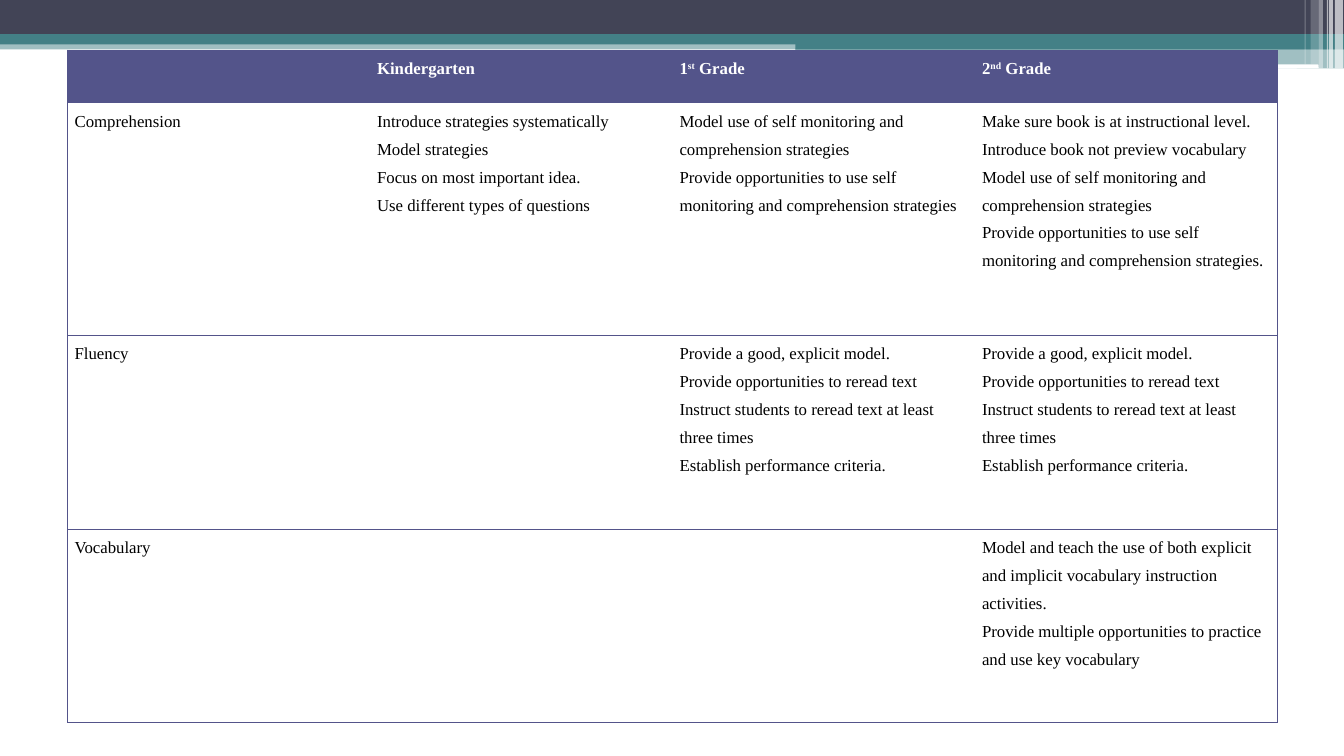
from lxml import etree
from pptx import Presentation
from pptx.dml.color import RGBColor
from pptx.enum.shapes import MSO_SHAPE
from pptx.enum.text import PP_ALIGN
from pptx.oxml.ns import qn
from pptx.util import Pt

PX = 9144  # 100 px to the inch
RECT, ROUNDED = MSO_SHAPE.RECTANGLE, MSO_SHAPE.ROUNDED_RECTANGLE
LEFT, JUSTIFY = PP_ALIGN.LEFT, PP_ALIGN.JUSTIFY
DARK, TEAL, WHITE, PURPLE, BLACK = "424456", "438086", "FFFFFF", "53548A", "000000"


def color(hex_code):
    return RGBColor.from_string(hex_code)


def add_border(cell, side, visible):
    line = etree.SubElement(cell._tc.get_or_add_tcPr(), qn(f"a:ln{side}"), w=str(Pt(0.75)))
    if visible:
        fill = etree.SubElement(line, qn("a:solidFill"))
        etree.SubElement(fill, qn("a:srgbClr"), val=PURPLE)
    else:
        etree.SubElement(line, qn("a:noFill"))


presentation = Presentation()
presentation.slide_width = 1333 * PX
presentation.slide_height = 750 * PX
slide = presentation.slides.add_slide(presentation.slide_layouts[6])

# Header bands: shape kind, left, top, width, height, fill, opacity in percent
bands = [
    (RECT, 0, 40, 1333, 9, TEAL, 50),
    (RECT, 0, 0, 1333, 34, DARK, 100),
    (RECT, 0, 34, 1333, 10, TEAL, 100),
    (RECT, 789, 39, 544, 10, TEAL, 100),
    (RECT, 789, 48, 544, 20, TEAL, 50),
    (ROUNDED, 788, 54, 447, 3, WHITE, 100),
    (ROUNDED, 1075, 64, 233, 4, WHITE, 100),
    (RECT, 1324, 0, 8, 68, WHITE, 65),
    (RECT, 1318, 0, 4, 68, WHITE, 65),
    (RECT, 1316, 0, 1, 68, WHITE, 60),
    (RECT, 1308, 0, 4, 68, WHITE, 40),
    (RECT, 1300, 0, 8, 64, WHITE, 20),
    (RECT, 1294, 0, 1, 64, WHITE, 30),
]
for kind, left, top, width, height, fill, opacity in bands:
    band = slide.shapes.add_shape(kind, left * PX, top * PX, width * PX, height * PX)
    band.shadow.inherit = False
    band.line.fill.background()
    band.fill.solid()
    band.fill.fore_color.rgb = color(fill)
    if opacity < 100:
        fill_color = band._element.spPr.find(f".//{qn('a:srgbClr')}")
        etree.SubElement(fill_color, qn("a:alpha"), val=str(opacity * 1000))

# Each cell is a list of paragraphs; text between ^ marks is superscript
fluency = [
    "Provide a good, explicit model.",
    "Provide opportunities to reread text",
    "Instruct students to reread text at least three times",
    "Establish performance criteria.",
]
monitoring = "Model use of self monitoring and comprehension strategies"
opportunities = "Provide opportunities to use self monitoring and comprehension strategies"
rows = [
    [[], ["Kindergarten"], ["1^st^ Grade"], ["2^nd^ Grade"]],
    [
        ["Comprehension"],
        [
            "Introduce strategies systematically",
            "Model strategies",
            "Focus on most important idea.",
            "Use different types of questions",
        ],
        [monitoring, opportunities],
        [
            "Make sure book is at instructional level.",
            "Introduce book not preview vocabulary",
            monitoring,
            opportunities + ".",
        ],
    ],
    [["Fluency"], [], fluency, fluency],
    [
        ["Vocabulary"],
        [],
        [],
        [
            "Model and teach the use of both explicit and implicit vocabulary instruction activities.",
            "Provide multiple opportunities to practice and use key vocabulary",
        ],
    ],
]
row_heights = [52, 231, 192, 192]
column_count = len(rows[0])
table = slide.shapes.add_table(
    len(rows), column_count, 67 * PX, 50 * PX, 1200 * PX, sum(row_heights) * PX
).table
table.horz_banding = False

for row_index, row in enumerate(rows):
    table.rows[row_index].height = row_heights[row_index] * PX
    is_header = row_index == 0
    for column_index, lines in enumerate(row):
        cell = table.cell(row_index, column_index)
        cell.margin_left = cell.margin_right = 7 * PX
        cell.margin_top = cell.margin_bottom = 0
        add_border(cell, "L", column_index == 0)
        add_border(cell, "R", column_index == column_count - 1)
        add_border(cell, "T", True)
        add_border(cell, "B", True)
        if is_header:
            cell.fill.solid()
            cell.fill.fore_color.rgb = color(PURPLE)
        else:
            cell.fill.background()

        for line_index, line in enumerate(lines):
            text_frame = cell.text_frame
            paragraph = text_frame.add_paragraph() if line_index else text_frame.paragraphs[0]
            paragraph.alignment = JUSTIFY if is_header else LEFT
            paragraph.line_spacing = 1.5
            for part_index, part in enumerate(line.split("^")):
                run = paragraph.add_run()
                run.text = part
                run.font.name = "Times New Roman"
                run.font.size = Pt(12)
                run.font.bold = is_header
                run.font.color.rgb = color(WHITE if is_header else BLACK)
                if part_index % 2:
                    run._r.get_or_add_rPr().set("baseline", "30000")

presentation.save("out.pptx")
